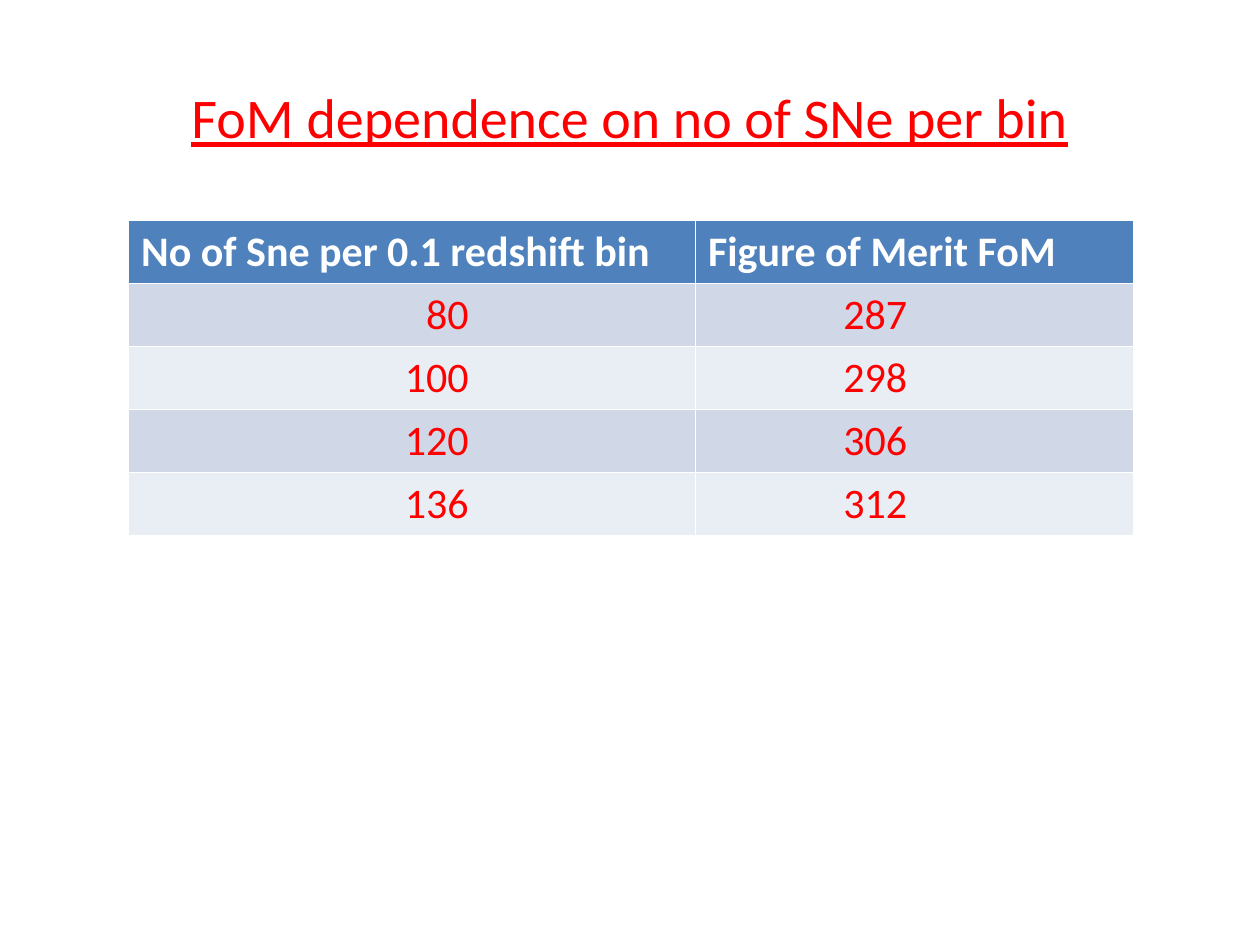
from dataclasses import dataclass

from pptx import Presentation
from pptx.dml.color import RGBColor
from pptx.enum.text import MSO_ANCHOR, PP_ALIGN
from pptx.util import Inches, Pt

LEFT, CENTER, RIGHT = PP_ALIGN.LEFT, PP_ALIGN.CENTER, PP_ALIGN.RIGHT
MIDDLE = MSO_ANCHOR.MIDDLE


@dataclass(frozen=True)
class Theme:
    font: str = "Calibri"
    title_size: int = 32
    table_size: int = 24
    accent: str = "FF0000"
    header_text: str = "FFFFFF"
    header_fill: str = "4F81BD"
    bands: tuple = ("D0D8E8", "E9EDF4")


THEME = Theme()


def write(frame, text, *, size, color, align=LEFT, bold=False, underline=False):
    paragraph = frame.paragraphs[0]
    paragraph.alignment = align
    run = paragraph.add_run()
    run.text = text
    run.font.name = THEME.font
    run.font.size = Pt(size)
    run.font.bold = bold
    run.font.underline = underline
    run.font.color.rgb = RGBColor.from_string(color)


prs = Presentation()
prs.slide_width, prs.slide_height = Inches(10), Inches(7.5)
slide = prs.slides.add_slide(prs.slide_layouts[6])

title = slide.shapes.add_textbox(Inches(0.5), Inches(0.3), Inches(9), Inches(1.25)).text_frame
title.word_wrap = True
title.vertical_anchor = MIDDLE
write(title, "FoM dependence on no of SNe per bin", size=THEME.title_size,
      color=THEME.accent, align=CENTER, underline=True)

headings = ("No of Sne per 0.1 redshift bin", "Figure of Merit FoM")
merit_by_count = ((80, 287), (100, 298), (120, 306), (136, 312))
column_widths = (4.5, 3.48)
row_height = 0.5
row_count = len(merit_by_count) + 1

merit_table = slide.shapes.add_table(
    row_count, len(headings), Inches(1.02), Inches(1.75),
    Inches(sum(column_widths)), Inches(row_height * row_count)).table

for column, width in zip(merit_table.columns, column_widths):
    column.width = Inches(width)

for index, heading in enumerate(headings):
    cell = merit_table.cell(0, index)
    cell.fill.solid()
    cell.fill.fore_color.rgb = RGBColor.from_string(THEME.header_fill)
    write(cell.text_frame, heading, size=THEME.table_size,
          color=THEME.header_text, bold=True)

for row, values in enumerate(merit_by_count, start=1):
    band = THEME.bands[(row - 1) % len(THEME.bands)]
    for index, value in enumerate(values):
        cell = merit_table.cell(row, index)
        cell.fill.solid()
        cell.fill.fore_color.rgb = RGBColor.from_string(band)
        cell.margin_right = Inches(1.8)
        write(cell.text_frame, str(value), size=THEME.table_size,
              color=THEME.accent, align=RIGHT)

prs.save("out.pptx")
